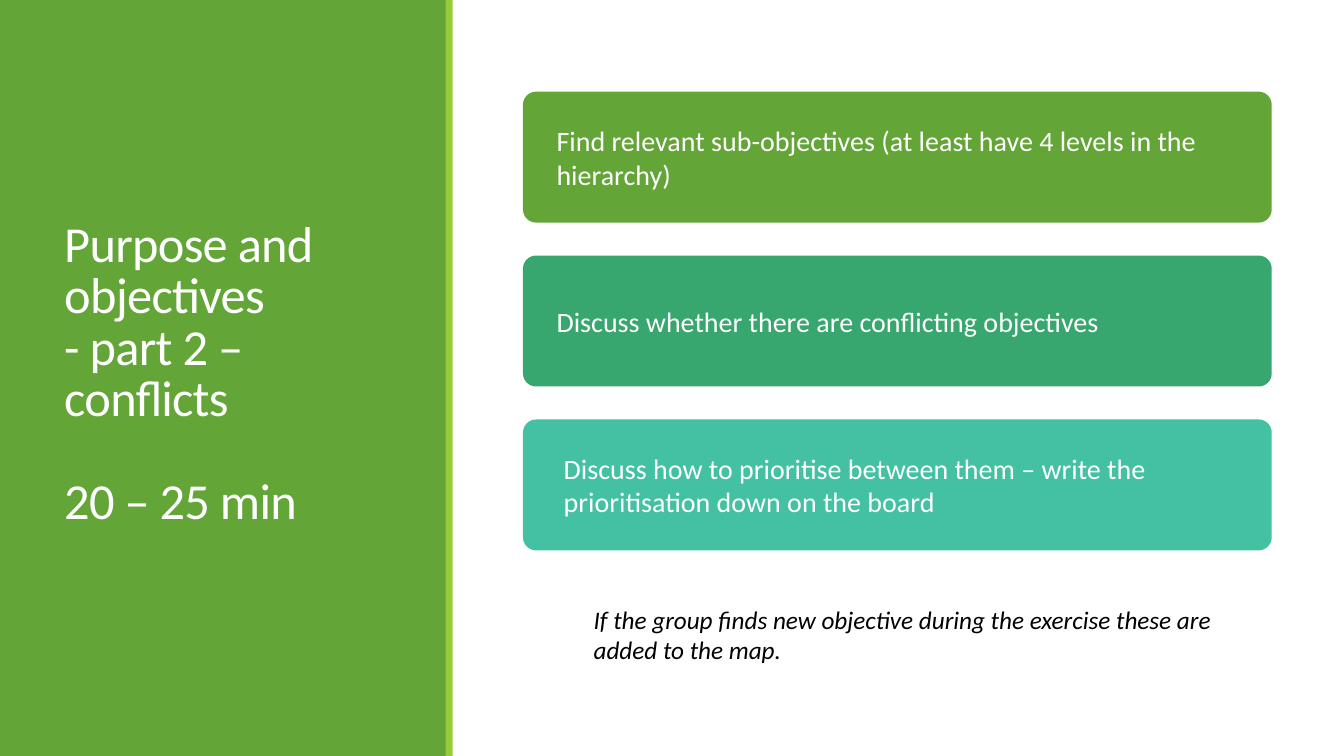
from pptx import Presentation
from pptx.dml.color import RGBColor
from pptx.enum.shapes import MSO_SHAPE
from pptx.enum.text import MSO_ANCHOR, PP_ALIGN
from pptx.util import Cm, Pt

RECT, ROUNDED = MSO_SHAPE.RECTANGLE, MSO_SHAPE.ROUNDED_RECTANGLE
TOP, MIDDLE = MSO_ANCHOR.TOP, MSO_ANCHOR.MIDDLE
LEFT = PP_ALIGN.LEFT

# Content
TITLE = "Purpose and objectives\v- part 2 – conflicts\v\v20 – 25 min"
# Text, fill colour name, left inset in cm
CARDS = [
    ("Find relevant sub-objectives (at least have 4 levels in the hierarchy)", "green", 0.75),
    ("Discuss whether there are conflicting objectives", "emerald", 0.75),
    ("Discuss how to prioritise between them – write the prioritisation down on the board",
     "teal", 0.93),
]
NOTE = "If the group finds new objective during the exercise these are added to the map."

THEME = {
    "font": "Calibri",
    "title": 36, "card": 20, "note": 18,
    "green": "63A537", "lime": "99CB38", "emerald": "37A76F", "teal": "44C1A3",
    "white": "FFFFFF", "black": "000000",
}

# Layout, in cm
SLIDE_W, SLIDE_H = 33.87, 19.05
PANEL_W, STRIPE_X, STRIPE_W = 11.25, 11.23, 0.18
CARD_X, CARD_Y, CARD_W, CARD_H, CARD_STEP = 13.18, 2.31, 18.87, 3.3, 4.13


def color(name):
    return RGBColor.from_string(THEME[name])


def add_block(s, kind, x, y, w, h, fill):
    sp = s.shapes.add_shape(kind, Cm(x), Cm(y), Cm(w), Cm(h))
    sp.shadow.inherit = False
    sp.fill.solid()
    sp.fill.fore_color.rgb = color(fill)
    sp.line.fill.background()
    return sp


def write(sp, text, size, ink="white", anchor=MIDDLE, italic=False,
          leading=1.0, tracking=0, insets=(0.25, 0.13, 0.25, 0.13)):
    tf = sp.text_frame
    tf.word_wrap = True
    tf.vertical_anchor = anchor
    tf.margin_left, tf.margin_top, tf.margin_right, tf.margin_bottom = map(Cm, insets)
    p = tf.paragraphs[0]
    p.text = text
    p.alignment = LEFT
    p.line_spacing = leading
    for r in p.runs:
        r.font.name = THEME["font"]
        r.font.size = Pt(THEME[size])
        r.font.italic = italic
        r.font.color.rgb = color(ink)
        if tracking:
            r.font._element.set("spc", str(int(tracking * 100)))
    # Line breaks take the size of the text around them
    for br in p._p.findall("{*}br"):
        br.insert(0, br.makeelement(p.runs[0].font._element.tag,
                                    {"sz": str(THEME[size] * 100)}))


prs = Presentation()
prs.slide_width, prs.slide_height = Cm(SLIDE_W), Cm(SLIDE_H)
s = prs.slides.add_slide(prs.slide_layouts[6])

# Title panel with its edge stripe
add_block(s, RECT, 0, 0, PANEL_W, SLIDE_H, "green")
title = s.shapes.add_textbox(Cm(1.37), Cm(1.45), Cm(8.56), Cm(16.03))
write(title, TITLE, "title", leading=0.85, tracking=-0.5)
add_block(s, RECT, STRIPE_X, 0, STRIPE_W, SLIDE_H, "lime")

# Task cards
for i, (text, fill, indent) in enumerate(CARDS):
    card = add_block(s, ROUNDED, CARD_X, CARD_Y + i * CARD_STEP, CARD_W, CARD_H, fill)
    card.adjustments[0] = 0.1
    write(card, text, "card", insets=(indent, 0.35, 0.25, 0.35))

# Closing note
note = s.shapes.add_textbox(Cm(14.71), Cm(15.09), Cm(16.94), Cm(1.8))
write(note, NOTE, "note", ink="black", anchor=TOP, italic=True)

prs.save("out.pptx")
